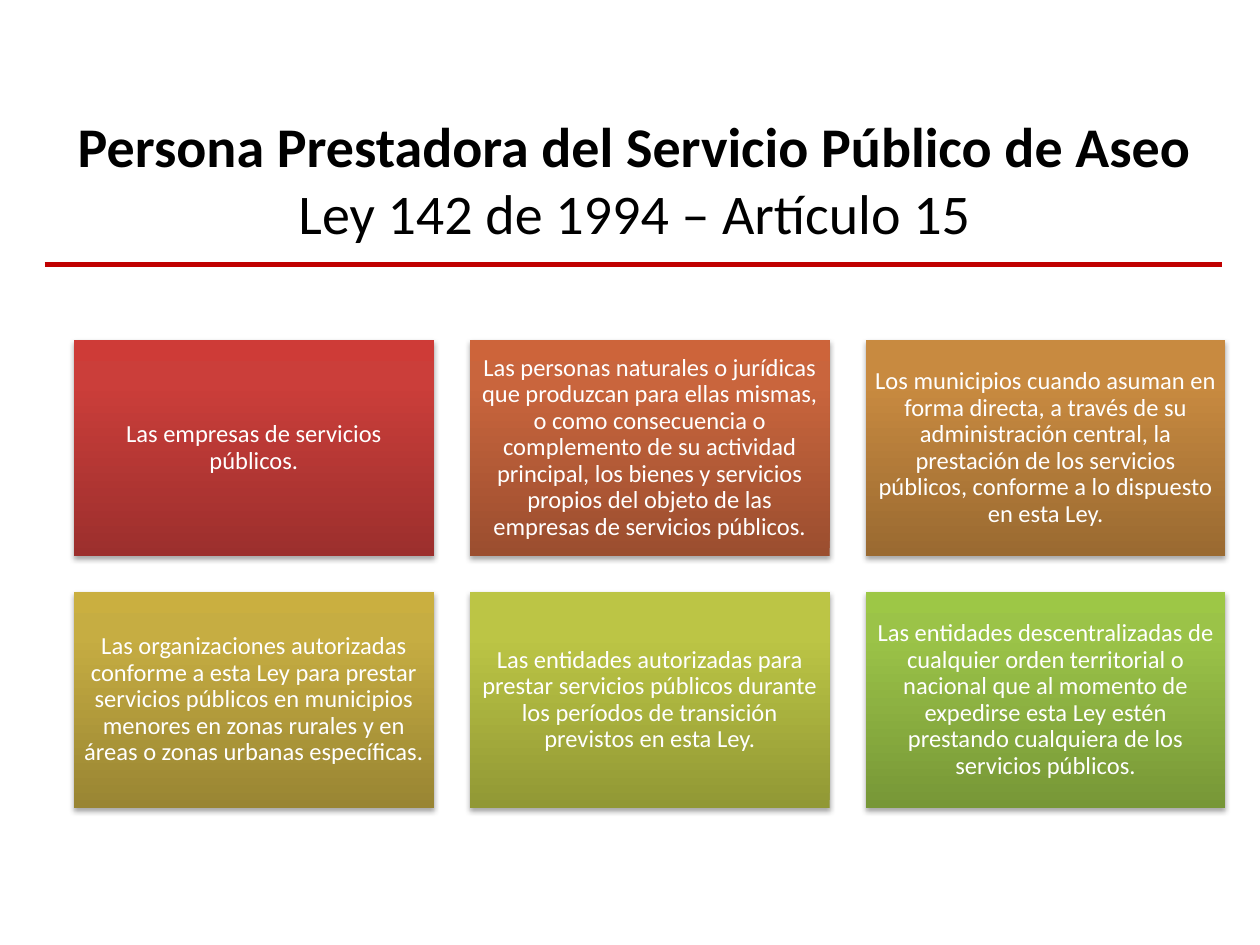
from copy import deepcopy

from lxml import etree
from pptx import Presentation
from pptx.dml.color import RGBColor
from pptx.enum import shapes, text
from pptx.oxml import ns
from pptx.util import Pt

COLORS = {"title": "000000", "rule": "C00000", "card": "FFFFFF", "shadow": "000000"}

CARDS = [
    ("Las empresas de servicios públicos.", ("9C2F2D", "CB3E3A", "CE3B37")),
    ("Las personas naturales o jurídicas que produzcan para ellas mismas, o como consecuencia o "
     "complemento de su actividad principal, los bienes y servicios propios del objeto de las "
     "empresas de servicios públicos.", ("9B4E2F", "C9653D", "CD643A")),
    ("Los municipios cuando asuman en forma directa, a través de su administración central, la "
     "prestación de los servicios públicos, conforme a lo dispuesto en esta Ley.",
     ("9A6A31", "C88A40", "CB8B3D")),
    ("Las organizaciones autorizadas conforme a esta Ley para prestar servicios públicos en "
     "municipios menores en zonas rurales y en áreas o zonas urbanas específicas.",
     ("998533", "C6AD42", "CAAF40")),
    ("Las entidades autorizadas para prestar servicios públicos durante los períodos de "
     "transición previstos en esta Ley.", ("919835", "BCC545", "BFC843")),
    ("Las entidades descentralizadas de cualquier orden territorial o nacional que al momento de "
     "expedirse esta Ley estén prestando cualquiera de los servicios públicos.",
     ("779737", "9BC348", "9DC746")),
]


class SlideBuilder:
    """Hold the style and the current slide, and draw each kind of element."""

    font = "Calibri"

    def __init__(self, page):
        self.page = page

    def add_span(self, para, words, size, color, bold=False):
        span = para.add_run()
        span.text = words
        span.font.name = self.font
        span.font.size = Pt(size)
        span.font.bold = bold
        span.font.color.rgb = RGBColor.from_string(COLORS[color])

    def add_shadow(self, shape, blur, distance, angle, alpha):
        shape.shadow.inherit = False
        effects = shape._element.spPr.find(ns.qn("a:effectLst"))
        outer = etree.SubElement(effects, ns.qn("a:outerShdw"), blurRad=str(Pt(blur)),
                                 dist=str(Pt(distance)), dir=str(angle * 60000), rotWithShape="0")
        color = etree.SubElement(outer, ns.qn("a:srgbClr"), val=COLORS["shadow"])
        etree.SubElement(color, ns.qn("a:alpha"), val=str(alpha * 1000))

    def add_title(self, heading, subheading):
        box = self.page.shapes.add_textbox(Pt(25.4), Pt(57), Pt(674.6), Pt(90))
        box.text_frame.word_wrap = True
        box.text_frame.vertical_anchor = text.MSO_ANCHOR.MIDDLE
        para = box.text_frame.paragraphs[0]
        para.alignment = text.PP_ALIGN.CENTER
        self.add_span(para, heading, 32, "title", bold=True)
        para.add_line_break()
        self.add_span(para, subheading, 32, "title")

    def add_rule(self, left, right, top):
        rule = self.page.shapes.add_connector(
            shapes.MSO_CONNECTOR.STRAIGHT, Pt(left), Pt(top), Pt(right), Pt(top))
        rule.line.color.rgb = RGBColor.from_string(COLORS["rule"])
        rule.line.width = Pt(3)
        etree.SubElement(rule._element.spPr, ns.qn("a:effectLst"))

    def add_gradient(self, shape, colors):
        shape.fill.gradient()
        shape.fill.gradient_angle = 90
        first = shape._element.spPr.find(".//" + ns.qn("a:gs"))
        first.addnext(deepcopy(first))
        for stop, position, color in zip(shape.fill.gradient_stops, (0, 0.8, 1), colors):
            stop.position = position
            stop.color.rgb = RGBColor.from_string(color)

    def add_card(self, words, colors, left, top, width, height):
        card = self.page.shapes.add_shape(
            shapes.MSO_SHAPE.RECTANGLE, Pt(left), Pt(top), Pt(width), Pt(height))
        self.add_gradient(card, colors)
        card.line.fill.background()
        self.add_shadow(card, 3.1, 1.8, 90, 35)
        frame = card.text_frame
        frame.word_wrap = True
        frame.vertical_anchor = text.MSO_ANCHOR.MIDDLE
        frame.margin_left = frame.margin_right = frame.margin_top = frame.margin_bottom = Pt(4.2)
        para = frame.paragraphs[0]
        para.alignment = text.PP_ALIGN.CENTER
        para.line_spacing = 0.9
        self.add_span(para, words, 14, "card")


def main():
    deck = Presentation()
    deck.slide_width, deck.slide_height = Pt(720), Pt(540)
    builder = SlideBuilder(deck.slides.add_slide(deck.slide_layouts[6]))

    builder.add_title("Persona Prestadora del Servicio Público de Aseo", "Ley 142 de 1994 – Artículo 15")
    builder.add_rule(25.5, 698.5, 151)

    width, height, gap = 205.6, 123.4, 20.6
    for index, (words, colors) in enumerate(CARDS):
        row, column = divmod(index, 3)
        builder.add_card(words, colors, 42.3 + column * (width + gap),
                         194.2 + row * (height + gap), width, height)

    deck.save("out.pptx")


if __name__ == "__main__":
    main()
